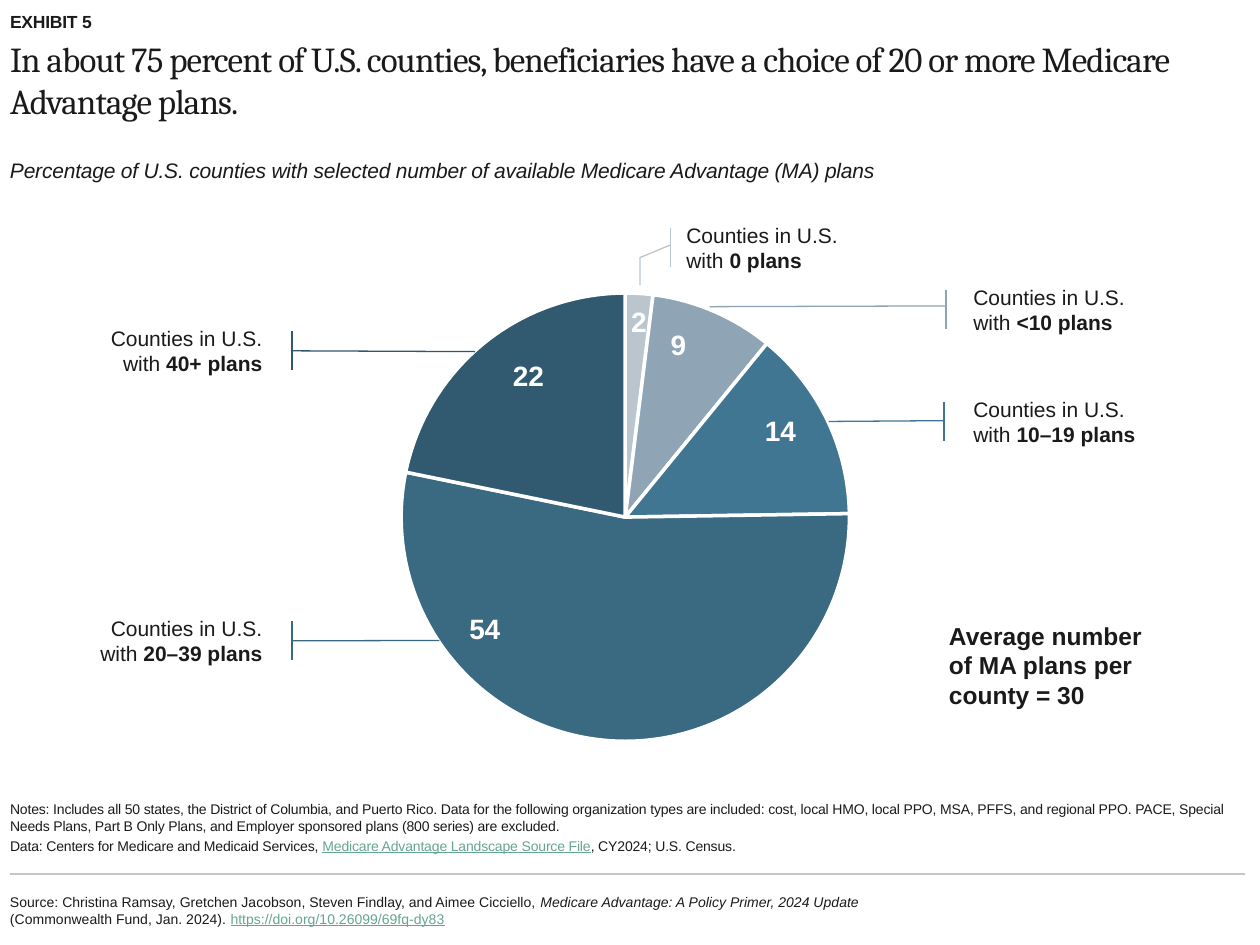
"""Build a slide with a pie chart of U.S. counties by number of Medicare Advantage plans."""
from dataclasses import dataclass
from typing import NamedTuple

from pptx import Presentation
from pptx import oxml as ox
from pptx import util as u
from pptx.chart import data as cd
from pptx.dml.color import RGBColor
from pptx.enum import chart as ce, shapes as se, text as te
from pptx.oxml import ns

SCALE = u.Inches(1) / 126
HUES = {
    "ink": "1A1A1A", "link": "65A591", "rule": "C6C6C6", "white": "FFFFFF",
    "none": "BAC5CE", "few": "8FA4B4", "some": "417693", "many": "3A6982", "most": "315A70",
    "few line": "8EA4B4", "many line": "386882", "most line": "2F576E",
}


class Box(NamedTuple):
    left: int
    top: int
    width: int
    height: int


class Part(NamedTuple):
    text: str
    bold: bool = False
    italic: bool = False
    link: bool = False


@dataclass
class Style:
    size: int
    anchor: te.MSO_ANCHOR = te.MSO_ANCHOR.TOP
    font: str = "Arial"
    track: int = 0
    align: te.PP_ALIGN = te.PP_ALIGN.LEFT
    inset: bool = False
    gap: float = 0


class Slice(NamedTuple):
    value: int
    hue: str
    shift: tuple[int, int]


class Note(NamedTuple):
    left: int
    top: int
    count: str
    hue: str
    bends: tuple[float, ...]
    flip: bool = False


CHART = Box(6, 171, 1235, 629)
SLICES = [
    Slice(2, "none", (-4, 8)),
    Slice(9, "few", (-20, 14)),
    Slice(14, "some", (-24, -6)),
    Slice(54, "many", (-137, -85)),
    Slice(22, "most", (20, 12)),
]
NOTES = [
    Note(961, 290, "<10", "few line", (0.41, -0.08, 0.43, -1.33)),
    Note(961, 402, "10–19", "some", (0.48, -0.09, 0.5, -0.7)),
    Note(674, 228, "0", "none", (0.44, -0.02, 0.76, -0.18, 1.47, -0.18)),
    Note(86, 621, "20–39", "many line", (0.51, -0.09, 0.5, -0.87), True),
    Note(86, 331, "40+", "most line", (0.51, -0.09, 0.53, -1.06), True),
]


def px(n: float) -> int:
    return round(n * SCALE)


def rgb(name: str) -> RGBColor:
    return RGBColor.from_string(HUES[name])


def write(shape, paras: list[list[Part]], style: Style) -> None:
    frame = shape.text_frame
    frame.word_wrap = True
    frame.auto_size = te.MSO_AUTO_SIZE.NONE
    frame.vertical_anchor = style.anchor
    if not style.inset:
        frame.margin_left = frame.margin_right = frame.margin_top = frame.margin_bottom = 0
    for i, parts in enumerate(paras):
        para = frame.add_paragraph() if i else frame.paragraphs[0]
        para.alignment = style.align
        para.space_before = u.Pt(style.gap if i else 0)
        for part in parts:
            run = para.add_run()
            run.text = part.text
            font = run.font
            font.name, font.size = style.font, u.Pt(style.size)
            font.bold, font.italic, font.underline = part.bold, part.italic, part.link
            font.color.rgb = rgb("link" if part.link else "ink")
            if style.track:
                run._r.get_or_add_rPr().set("spc", str(style.track))


def place(shape, box: Box):
    shape.left, shape.top, shape.width, shape.height = map(px, box)
    return shape


def add_box(slide, box: Box):
    return slide.shapes.add_textbox(*map(px, box))


def layout(**vals):
    rows = "".join(f'<c:{key} val="{val}"/>' for key, val in vals.items())
    return ox.parse_xml(f'<c:layout {ns.nsdecls("c")}><c:manualLayout>{rows}</c:manualLayout></c:layout>')


def add_pie(slide) -> None:
    data = cd.CategoryChartData(number_format="#,##0")
    data.categories = [str(i + 1) for i in range(len(SLICES))]
    data.add_series("Series 1", [s.value for s in SLICES])
    chart = slide.shapes.add_chart(ce.XL_CHART_TYPE.PIE, *map(px, CHART), data).chart
    chart.has_legend = chart.has_title = False
    chart.font.name, chart.font.size = "Arial", u.Pt(10)
    chart.font.color.rgb = rgb("ink")
    plot = chart.plots[0]
    plot.vary_by_categories = True
    series = plot.series[0]
    for i, item in enumerate(SLICES):
        point = series.points[i]
        point.format.fill.solid()
        point.format.fill.fore_color.rgb = rgb(item.hue)
        point.format.line.color.rgb = rgb("white")
        point.format.line.width = u.Pt(2)
        label = point.data_label
        label.position = ce.XL_LABEL_POSITION.INSIDE_END
        font = label.font
        font.name, font.size, font.bold = "Arial", u.Pt(16), True
        font.color.rgb = rgb("white")
    for mark, item in zip(series._element.xpath(".//c:dLbl"), SLICES):
        x, y = item.shift
        mark.insert(1, layout(x=round(x / CHART.width, 2), y=round(y / CHART.height, 2)))
    area = chart._chartSpace.xpath(".//c:plotArea")[0]
    for old in area.xpath("./c:layout"):
        area.remove(old)
    area.insert(0, layout(layoutTarget="inner", xMode="edge", yMode="edge", x=0.32, y=0.194, w=0.363, h=0.713))


def add_note(slide, note: Note) -> None:
    kind = se.MSO_SHAPE.LINE_CALLOUT_1_ACCENT_BAR
    if len(note.bends) == 6:
        kind = se.MSO_SHAPE.LINE_CALLOUT_2_ACCENT_BAR
    shape = slide.shapes.add_shape(kind, *map(px, Box(note.left, note.top, 189, 39)))
    for i, bend in enumerate(note.bends):
        shape.adjustments[i] = bend
    shape.shadow.inherit = False
    shape.fill.background()
    shape.line.color.rgb = rgb(note.hue)
    shape.line.width = u.Pt(0.75)
    if note.flip:
        shape._element.spPr.xfrm.set("flipH", "1")
    align = te.PP_ALIGN.RIGHT if note.flip else te.PP_ALIGN.LEFT
    parts = [Part("Counties in U.S. with "), Part(f"{note.count} plans", bold=True)]
    write(shape, [parts], Style(12, te.MSO_ANCHOR.MIDDLE, align=align, inset=True))


def add_rule(slide) -> None:
    rule = slide.shapes.add_connector(se.MSO_CONNECTOR.STRAIGHT, px(10), px(874), px(1245), px(874))
    rule.line.color.rgb = rgb("rule")
    rule.line.width = u.Pt(0.75)
    rule._element.spPr.append(ox.parse_xml(f'<a:effectLst {ns.nsdecls("a")}/>'))


def main() -> None:
    deck = Presentation()
    deck.slide_width, deck.slide_height = px(1260), px(945)
    slide = deck.slides.add_slide(deck.slide_layouts[4])
    hold = {p.placeholder_format.idx: p for p in slide.placeholders}
    for idx in (2, 4):
        hold[idx]._element.getparent().remove(hold[idx]._element)
    low = te.MSO_ANCHOR.BOTTOM
    write(place(hold[0], Box(10, 37, 1235, 105)), [[Part(
        "In about 75 percent of U.S. counties, beneficiaries have a choice of 20 or more "
        "Medicare Advantage plans.")]], Style(20, font="Cambria", track=-50))
    write(place(hold[1], Box(10, 6, 1235, 26)), [[Part("EXHIBIT 5", bold=True)]], Style(10, low, track=-10))
    write(place(hold[3], Box(10, 791, 1235, 63)), [
        [Part("Notes: Includes all 50 states, the District of Columbia, and Puerto Rico. Data for the "
              "following organization types are included: cost, local HMO, local PPO, MSA, PFFS, and "
              "regional PPO. PACE, Special Needs Plans, Part B Only Plans, and Employer sponsored plans "
              "(800 series) are excluded.")],
        [Part("Data: Centers for Medicare and Medicaid Services, "),
         Part("Medicare Advantage Landscape Source File", link=True), Part(", CY2024; U.S. Census.")],
    ], Style(8, low, track=-10, gap=1.6))
    add_rule(slide)
    write(add_box(slide, Box(10, 881, 867, 58)), [[
        Part("Source: Christina Ramsay, Gretchen Jacobson, Steven Findlay, and Aimee Cicciello, "),
        Part("Medicare Advantage: A Policy Primer, 2024 Update ", italic=True),
        Part("(Commonwealth Fund, Jan. 2024). "),
        Part("https://doi.org/10.26099/69fq-dy83", link=True),
    ]], Style(8, te.MSO_ANCHOR.MIDDLE))
    add_pie(slide)
    for note in NOTES:
        add_note(slide, note)
    write(add_box(slide, Box(949, 621, 202, 110)),
          [[Part("Average number of MA plans per county = 30", bold=True)]], Style(14))
    write(add_box(slide, Box(10, 158, 1235, 32)), [[Part(
        "Percentage of U.S. counties with selected number of available Medicare Advantage (MA) plans",
        italic=True)]], Style(12, track=-10))
    deck.save("out.pptx")


if __name__ == "__main__":
    main()
